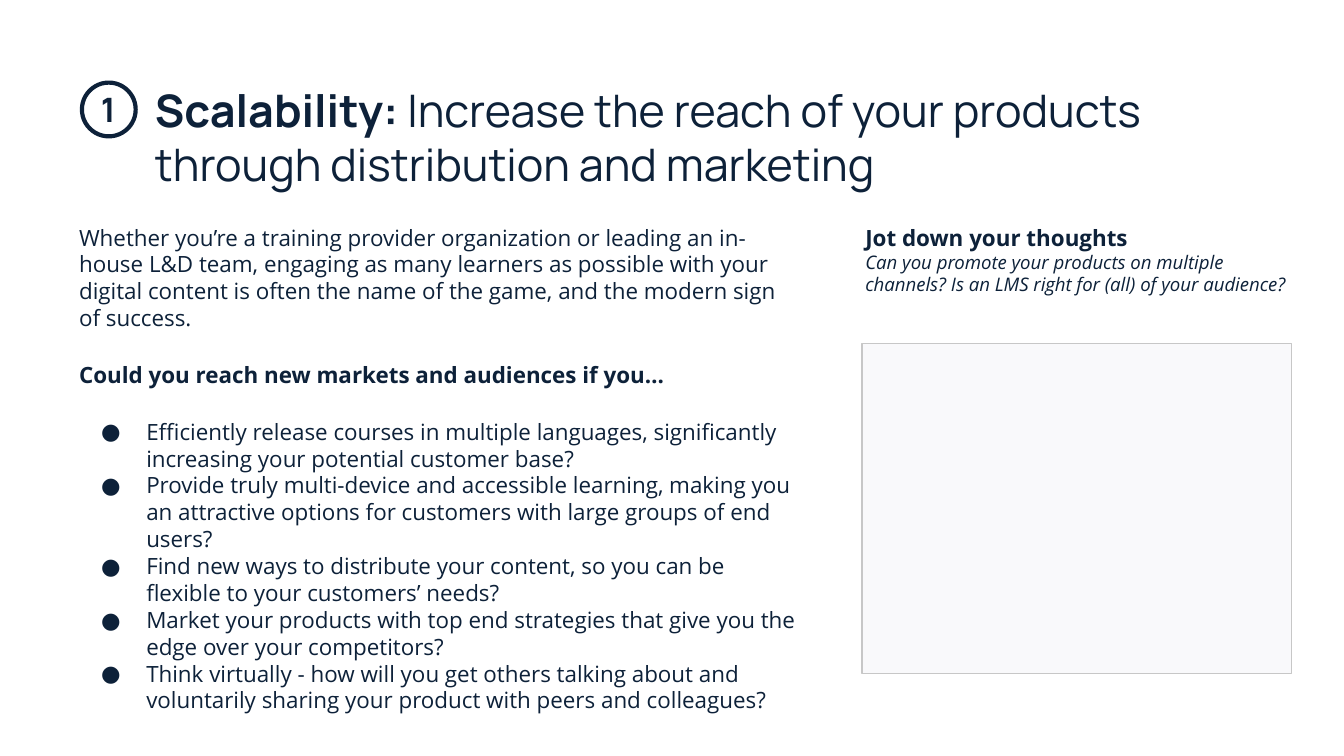
from dataclasses import dataclass

from lxml.etree import SubElement
from pptx import Presentation
from pptx.dml.color import RGBColor
from pptx.enum.shapes import MSO_SHAPE
from pptx.enum.text import MSO_ANCHOR, PP_ALIGN
from pptx.oxml.ns import qn
from pptx.slide import Slide
from pptx.util import Emu, Pt

PX = 4572  # 200 px to the inch
SLIDE_WIDTH, SLIDE_HEIGHT = 2000, 1125
COLORS = {"navy": "0D2139", "panel": "F9F9FB", "border": "C7C7C7"}
INSET = 20
BULLET_INDENT, BULLET_HANG = 100, 67
TITLE_FONT, BODY_FONT = "Manrope", "Open Sans"
BODY_SIZE = 12


@dataclass(frozen=True)
class Box:
    left: int
    top: int
    width: int
    height: int

    def emu(self) -> list[Emu]:
        return [Emu(side * PX) for side in (self.left, self.top, self.width, self.height)]


@dataclass(frozen=True)
class Span:
    text: str
    size: int = BODY_SIZE
    bold: bool = False
    italic: bool = False
    font: str = BODY_FONT
    break_after: bool = False


@dataclass(frozen=True)
class Block:
    spans: tuple[Span, ...]
    space_before: int = 0
    bullet: bool = False
    alignment: PP_ALIGN = PP_ALIGN.LEFT


@dataclass(frozen=True)
class Outline:
    box: Box
    preset: MSO_SHAPE
    line: str
    width: float
    fill: str | None = None


def color(name: str) -> RGBColor:
    return RGBColor.from_string(COLORS[name])


def add_bullet(paragraph) -> None:
    properties = paragraph._p.get_or_add_pPr()
    properties.set("marL", str(BULLET_INDENT * PX))
    properties.set("indent", str(-BULLET_HANG * PX))
    bullet_color = SubElement(properties, qn("a:buClr"))
    SubElement(bullet_color, qn("a:srgbClr"), val=COLORS["navy"])
    SubElement(properties, qn("a:buSzPts"), val=str(BODY_SIZE * 100))
    SubElement(properties, qn("a:buFont"), typeface=BODY_FONT)
    SubElement(properties, qn("a:buChar"), char="●")


def add_text(slide: Slide, box: Box, blocks: list[Block]) -> None:
    frame = slide.shapes.add_textbox(*box.emu()).text_frame
    frame_format = {"word_wrap": True, "vertical_anchor": MSO_ANCHOR.TOP}
    for side in ("left", "top", "right", "bottom"):
        frame_format[f"margin_{side}"] = Emu(INSET * PX)
    for name, value in frame_format.items():
        setattr(frame, name, value)
    for index, block in enumerate(blocks):
        paragraph = frame.add_paragraph() if index else frame.paragraphs[0]
        if block.bullet:
            add_bullet(paragraph)
        paragraph.alignment = block.alignment
        paragraph.space_before = Pt(block.space_before)
        for span in block.spans:
            run = paragraph.add_run()
            run.text = span.text
            font_format = {"name": span.font, "size": Pt(span.size),
                           "bold": span.bold, "italic": span.italic}
            for name, value in font_format.items():
                setattr(run.font, name, value)
            run.font.color.rgb = color("navy")
            if span.break_after:
                paragraph.add_line_break()


def add_outline(slide: Slide, outline: Outline) -> None:
    shape = slide.shapes.add_shape(outline.preset, *outline.box.emu())
    shape.shadow.inherit = False
    if outline.fill:
        shape.fill.solid()
        shape.fill.fore_color.rgb = color(outline.fill)
    else:
        shape.fill.background()
    shape.line.color.rgb = color(outline.line)
    shape.line.width = Pt(outline.width)


TITLE = [Block((
    Span("Scalability: ", 24, bold=True, font=TITLE_FONT),
    Span("Increase the reach of your products through distribution and marketing",
         24, font=TITLE_FONT),
))]
NUMBER = [Block((Span("1", 18, bold=True, font=TITLE_FONT),), alignment=PP_ALIGN.CENTER)]
INTRODUCTION = (
    "Whether you’re a training provider organization or leading an in-house L&D team, "
    "engaging as many learners as possible with your digital content is often the name "
    "of the game, and the modern sign of success."
)
QUESTION = "Could you reach new markets and audiences if you…"
IDEAS = [
    "Efficiently release courses in multiple languages, significantly increasing your "
    "potential customer base?",
    "Provide truly multi-device and accessible learning, making you an attractive options "
    "for customers with large groups of end users?",
    "Find new ways to distribute your content, so you can be flexible to your customers’ needs?",
    "Market your products with top end strategies that give you the edge over your competitors?",
    "Think virtually - how will you get others talking about and voluntarily sharing your "
    "product with peers and colleagues?",
]
BODY = [
    Block((Span(INTRODUCTION),)),
    Block((Span(QUESTION, bold=True),), space_before=16),
    *(Block((Span(idea),), space_before=0 if index else 16, bullet=True)
      for index, idea in enumerate(IDEAS)),
]
PROMPT = [Block((
    Span("Jot down your thoughts", bold=True, break_after=True),
    Span("Can you promote your products on multiple channels? "
         "Is an LMS right for (all) of your audience?", 10, italic=True),
))]
NUMBER_RING = Outline(Box(122, 123, 80, 80), MSO_SHAPE.OVAL, "navy", 2.25)
NOTES_PANEL = Outline(Box(1283, 511, 639, 491), MSO_SHAPE.RECTANGLE, "border", 0.75, "panel")


def main() -> None:
    presentation = Presentation()
    presentation.slide_width = Emu(SLIDE_WIDTH * PX)
    presentation.slide_height = Emu(SLIDE_HEIGHT * PX)
    slide = presentation.slides.add_slide(presentation.slide_layouts[6])
    add_text(slide, Box(211, 103, 1752, 364), TITLE)
    add_outline(slide, NUMBER_RING)
    add_text(slide, Box(130, 112, 62, 80), NUMBER)
    add_text(slide, Box(98, 313, 1112, 720), BODY)
    add_text(slide, Box(1268, 313, 668, 250), PROMPT)
    add_outline(slide, NOTES_PANEL)
    presentation.save("out.pptx")


if __name__ == "__main__":
    main()
